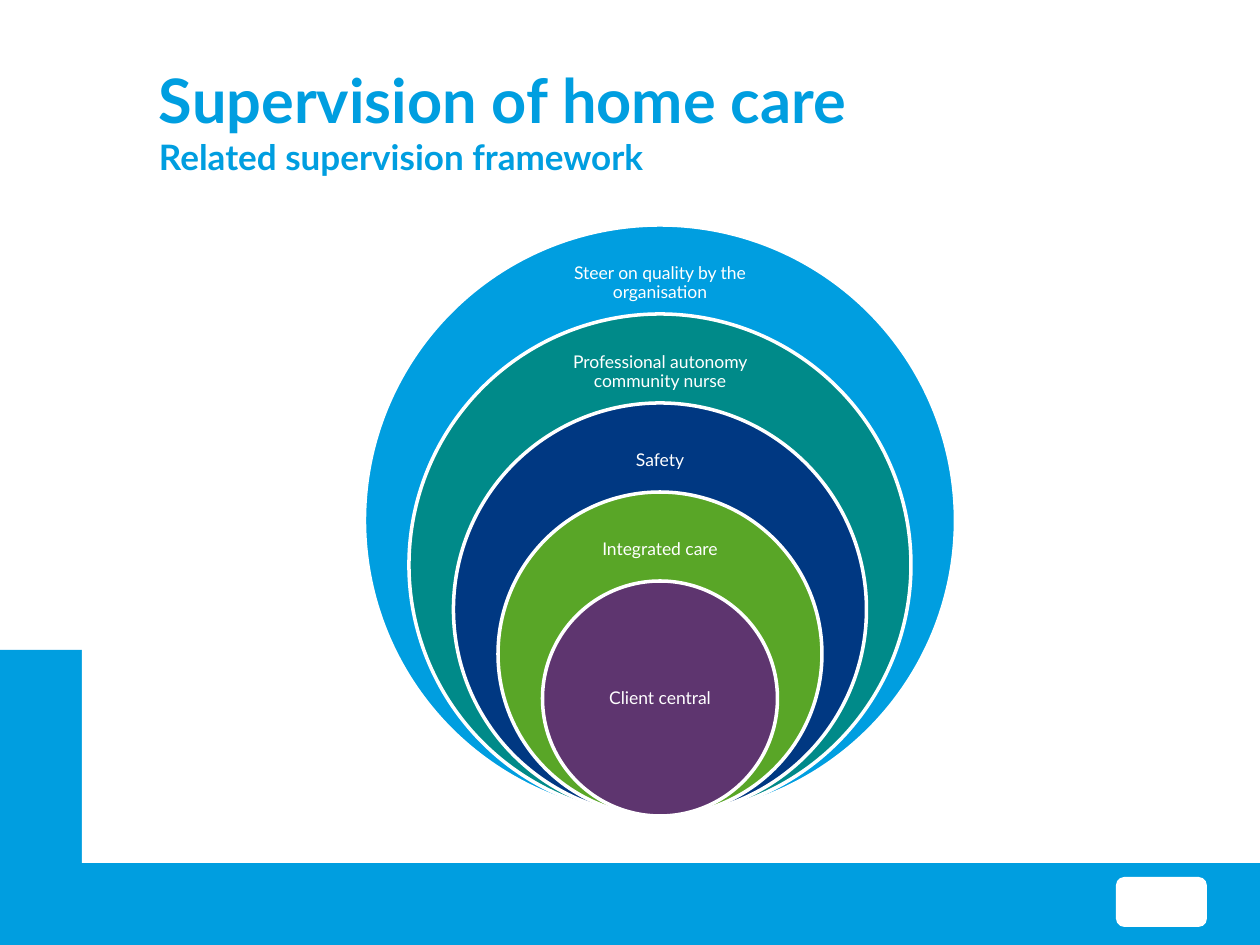
from pptx import Presentation
from pptx.dml.color import RGBColor
from pptx.enum.shapes import MSO_SHAPE
from pptx.enum.text import MSO_ANCHOR, PP_ALIGN
from pptx.util import Emu, Pt

RECTANGLE = MSO_SHAPE.RECTANGLE
ROUNDED = MSO_SHAPE.ROUNDED_RECTANGLE
ELLIPSE = MSO_SHAPE.OVAL
TOP, MIDDLE = MSO_ANCHOR.TOP, MSO_ANCHOR.MIDDLE
LEFT, CENTER = PP_ALIGN.LEFT, PP_ALIGN.CENTER

PX_PER_INCH = 126
EMU_PER_PX = 914400 / PX_PER_INCH
SLIDE_WIDTH, SLIDE_HEIGHT = 1260, 945
BLUE, WHITE = "009EE0", "FFFFFF"


def px(length):
    return Emu(round(length * EMU_PER_PX))


def color(hex_code):
    return RGBColor.from_string(hex_code)


class SlideBuilder:
    font = "Lato"

    def __init__(self, slide):
        self.slide = slide

    def shape(self, kind, left, top, width, height, fill, line=None):
        shape = self.slide.shapes.add_shape(
            kind, px(left), px(top), px(width), px(height))
        shape.shadow.inherit = False
        shape.fill.solid()
        shape.fill.fore_color.rgb = color(fill)
        if line:
            shape.line.color.rgb = color(line)
            shape.line.width = Pt(2)
        else:
            shape.line.fill.background()

    def text(self, left, top, width, height, lines, text_color, bold=False,
             align=LEFT, anchor=TOP, inset=0, spacing=1.0):
        """Write (wording, size) pairs as the lines of one paragraph."""
        frame = self.slide.shapes.add_textbox(
            px(left), px(top), px(width), px(height)).text_frame
        frame.word_wrap = True
        frame.vertical_anchor = anchor
        frame.margin_left = frame.margin_right = px(inset)
        frame.margin_top = frame.margin_bottom = px(inset)
        paragraph = frame.paragraphs[0]
        paragraph.alignment = align
        paragraph.line_spacing = spacing
        for index, (wording, size) in enumerate(lines):
            if index:
                paragraph.add_line_break()
            run = paragraph.add_run()
            run.text = wording
            run.font.name = self.font
            run.font.size = Pt(size)
            run.font.bold = bold
            run.font.color.rgb = color(text_color)


def main():
    deck = Presentation()
    deck.slide_width, deck.slide_height = px(SLIDE_WIDTH), px(SLIDE_HEIGHT)
    builder = SlideBuilder(deck.slides.add_slide(deck.slide_layouts[6]))

    # Blue corner band, with a plain plate in the logo's place
    builder.shape(RECTANGLE, 0, 650, SLIDE_WIDTH, 295, BLUE)
    builder.shape(RECTANGLE, 82, 0, 1178, 863, WHITE)
    builder.shape(ROUNDED, 1116, 877, 91, 50, WHITE)

    # Title and subtitle
    builder.text(159, 62, 1027, 84,
                 [("Supervision of home care", 35),
                  ("Related supervision framework", 20)], BLUE, bold=True)

    # Nested circles that share their lowest point, outermost first
    layers = [
        ("Steer on quality by the organisation", BLUE, 222),
        ("Professional autonomy community nurse", "008A89", 217),
        ("Safety", "003882", 214),
        ("Integrated care", "59A627", 175),
        ("Client central", "5E356F", 168),
    ]
    center_x, bottom = 660, 816
    outer_diameter, diameter_step = 591, 89
    for index, (label, fill, label_width) in enumerate(layers):
        diameter = outer_diameter - index * diameter_step
        top = bottom - diameter
        builder.shape(ELLIPSE, center_x - diameter / 2, top,
                      diameter, diameter, fill, line=WHITE)
        # The innermost label is centred, the others sit in the visible band
        innermost = index == len(layers) - 1
        label_height = 118 if innermost else 58
        builder.text(center_x - label_width / 2, top + label_height / 2,
                     label_width, label_height, [(label, 10)], WHITE,
                     align=CENTER, anchor=MIDDLE, inset=10, spacing=0.9)

    deck.save("out.pptx")


if __name__ == "__main__":
    main()
